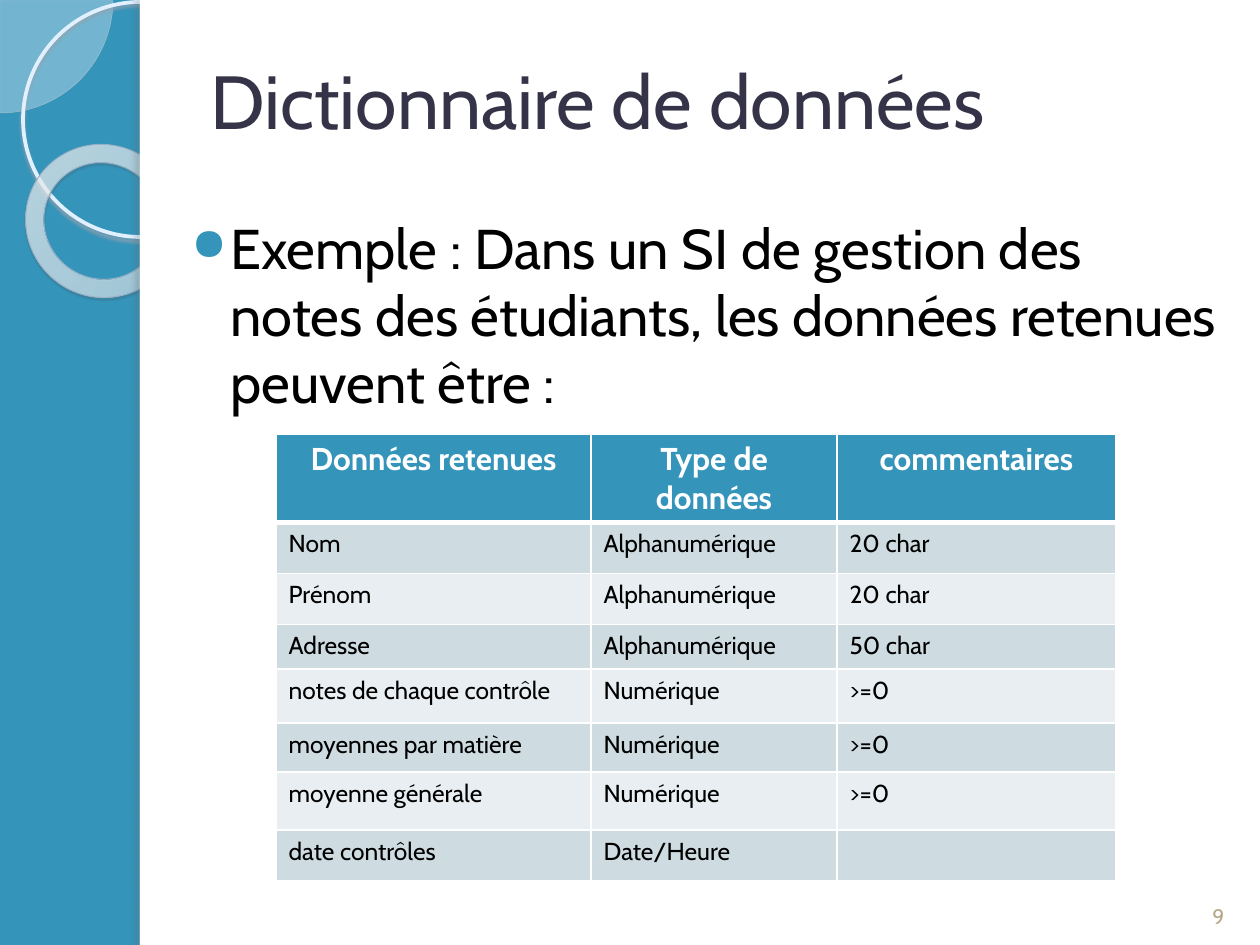
from lxml import etree
from pptx import Presentation
from pptx import util as u
from pptx.dml.color import RGBColor
from pptx.enum import shapes, text
from pptx.oxml import parse_xml
from pptx.oxml.ns import qn

# Content
TITLE = "Dictionnaire de données"
INTRO = ("Exemple : Dans un SI de gestion des notes des étudiants, "
         "les données retenues peuvent être :")
PAGE = "9"
HEAD = ("Données retenues", "Type de données", "commentaires")
DATA = [
    ("Nom", "Alphanumérique", "20 char"),
    ("Prénom", "Alphanumérique", "20 char"),
    ("Adresse", "Alphanumérique", "50 char"),
    ("notes de chaque contrôle", "Numérique", ">=0"),
    ("moyennes par matière", "Numérique", ">=0"),
    ("moyenne générale", "Numérique", ">=0"),
    ("date contrôles", "Date/Heure", ""),
]
COLS = (315, 246, 279)
ROWS = (88, 51, 51, 45, 54, 49, 58, 49)

# Format
FONT = "Cabin"
HEX = dict(blue="3494BA", white="FFFFFF", black="000000", title="353347",
           page="B5A788", dark="CEDCE1", light="E8EEF1", pie="F5F9FD",
           pieline="A6BCCF", ring="E0F0FF", ringshade="94A2AF",
           donutline="99B0C4", donutshade="475159", edgeshade="666D73")
GLOW = [(0, "F7FBFE", 70), (70, "FBFDFF", 55), (100, "99C4E8", 60)]
NS = 'xmlns:a="http://schemas.openxmlformats.org/drawingml/2006/main"'
KIND = shapes.MSO_SHAPE
ALIGN = text.PP_ALIGN
ANCHOR = text.MSO_ANCHOR


def px(n):
    return u.Emu(round(n * 914400 / 126))


def rgb(name):
    return RGBColor.from_string(HEX[name])


def sub(parent, tag, **attrs):
    node = etree.SubElement(parent, qn(tag))
    for key, val in attrs.items():
        node.set(key, str(val))
    return node


def draw(kind, box, fill=None, line=None, width=0, alpha=None, shade=None,
         adj=()):
    """Add a preset shape; shade is colour, alpha, blur, distance, angle."""
    shape = slide.shapes.add_shape(kind, *map(px, box))
    for i, val in enumerate(adj):
        shape.adjustments[i] = val
    if fill:
        shape.fill.solid()
        shape.fill.fore_color.rgb = rgb(fill)
    else:
        shape.fill.background()
    if line:
        shape.line.color.rgb = rgb(line)
        shape.line.width = u.Pt(width)
    else:
        shape.line.fill.background()
    props = shape._element.spPr
    if alpha:
        sub(props.find(qn("a:solidFill"))[0], "a:alpha", val=alpha * 1000)
    shape.shadow.inherit = False
    if shade:
        tint, dim, blur, dist, angle = shade
        cast = sub(props.find(qn("a:effectLst")), "a:outerShdw",
                   blurRad=u.Pt(blur), dist=u.Pt(dist), dir=angle * 60000,
                   algn="tl", rotWithShape=0)
        sub(sub(cast, "a:srgbClr", val=HEX[tint]), "a:alpha", val=dim * 1000)
    return shape


def write(para, words, color, **font):
    run = para.add_run()
    run.text = words
    run.font.color.rgb = rgb(color)
    for key, val in dict(name=FONT, **font).items():
        setattr(run.font, key, val)


def label(box, words, color, size, **frame):
    area = slide.shapes.add_textbox(*map(px, box)).text_frame
    for key, val in dict(word_wrap=True, **frame).items():
        setattr(area, key, val)
    write(area.paragraphs[0], words, color, size=u.Pt(size))
    return area.paragraphs[0]


def border(cell, **widths):
    props = cell._tc.get_or_add_tcPr()
    for i, (side, width) in enumerate(widths.items()):
        props.insert(i, parse_xml(
            f'<a:{side} {NS} w="{u.Pt(width)}"><a:solidFill>'
            f'<a:srgbClr val="{HEX["white"]}"/></a:solidFill></a:{side}>'))


deck = Presentation()
deck.slide_width, deck.slide_height = px(1260), px(945)
slide = deck.slides.add_slide(deck.slide_layouts[6])
slide.background.fill.solid()
slide.background.fill.fore_color.rgb = rgb("blue")

# Side decoration
draw(KIND.PIE, (-113, -113, 226, 226), "pie", "pieline", 0.25, alpha=33,
     adj=(0, 54))
draw(KIND.OVAL, (23, 2, 235, 235), line="ring", width=2.15,
     shade=("ringshade", 85, 2, 2, 90))
donut = draw(KIND.DONUT, (25, 145, 155, 152), "white", "donutline", 0.58,
             shade=("donutshade", 35, 1, 1.2, 75), adj=(0.12,))
donut.rotation = 38.6
stops = "".join(
    f'<a:gs pos="{at * 1000}"><a:srgbClr val="{tint}">'
    f'<a:alpha val="{dim * 1000}"/></a:srgbClr></a:gs>'
    for at, tint, dim in GLOW)
skin = donut._element.spPr
skin.replace(skin.find(qn("a:solidFill")), parse_xml(
    f'<a:gradFill {NS} rotWithShape="1"><a:gsLst>{stops}</a:gsLst>'
    '<a:path path="circle"><a:fillToRect l="-408000" t="-50000" '
    'r="508000" b="150000"/></a:path></a:gradFill>'))

# White page and its shaded edge
draw(KIND.RECTANGLE, (140, 0, 1120, 945), "white")
draw(KIND.RECTANGLE, (140, 0, 10, 945), "white",
     shade=("edgeshade", 25, 3, 3, 180))

# Bulleted text
para = label((168, 207, 1063, 661), INTRO, "black", 32)
props = para._p.get_or_add_pPr()
props.set("marL", str(px(50)))
props.set("indent", str(px(-39)))
sub(sub(props, "a:buClr"), "a:srgbClr", val=HEX["blue"])
sub(props, "a:buSzPct", val=80000)
sub(props, "a:buChar", char="●")

# Title
label((198, 20, 1033, 158), TITLE, "title", 43, vertical_anchor=ANCHOR.MIDDLE)

# Table
table = slide.shapes.add_table(len(ROWS), len(COLS), px(276), px(434),
                               px(sum(COLS)), px(sum(ROWS))).table
for col, width in zip(table.columns, COLS):
    col.width = px(width)
for row, height in zip(table.rows, ROWS):
    row.height = px(height)
for r, line in enumerate([HEAD] + DATA):
    top = r == 0
    for c, words in enumerate(line):
        cell = table.cell(r, c)
        cell.fill.solid()
        cell.fill.fore_color.rgb = rgb(
            "blue" if top else "dark" if r % 2 else "light")
        border(cell, lnL=1, lnR=1, lnT=3 if r == 1 else 1, lnB=3 if top else 1)
        para = cell.text_frame.paragraphs[0]
        para.alignment = ALIGN.CENTER if top else ALIGN.LEFT
        write(para, words, "white" if top else "black",
              size=u.Pt(18 if top else 14), bold=top)

# Page number
label((1187, 869, 63, 66), PAGE, "page", 12,
      vertical_anchor=ANCHOR.BOTTOM).alignment = ALIGN.CENTER

deck.save("out.pptx")
